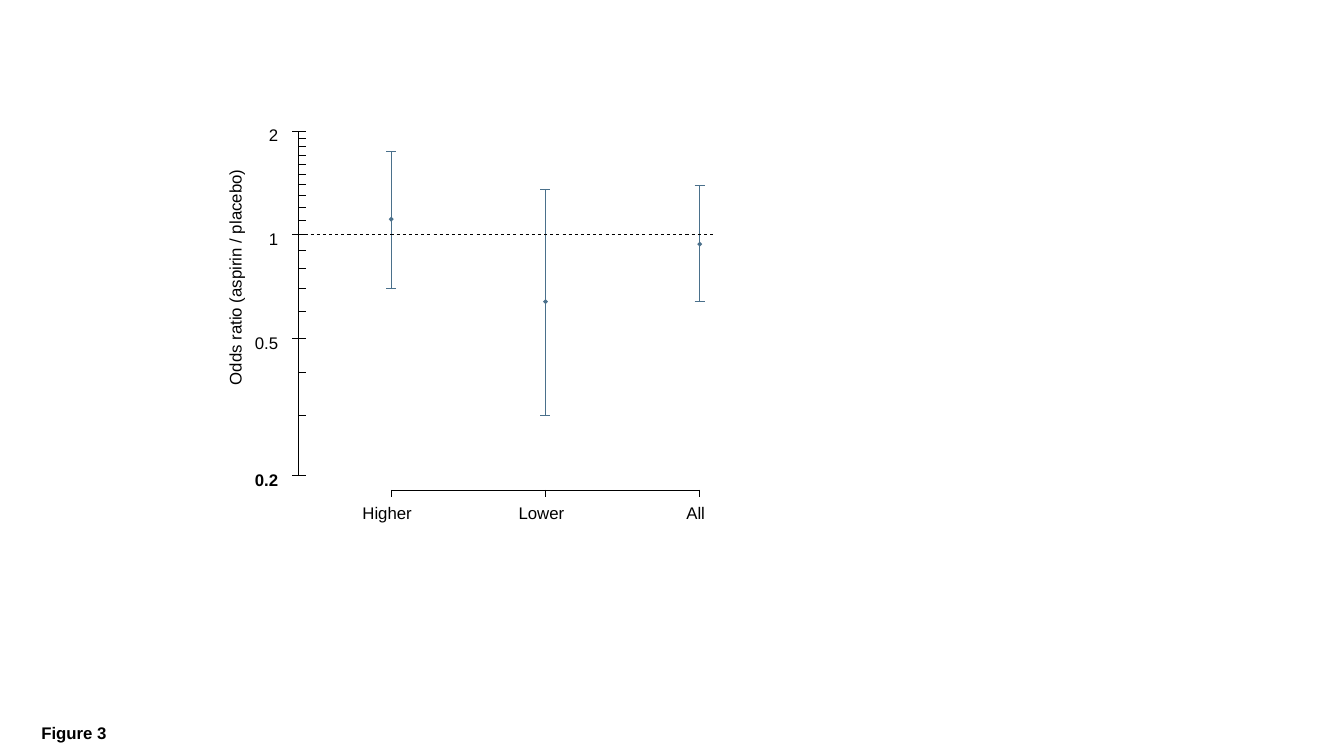
"""Build the odds ratio slide with a logarithmic scale and confidence intervals."""
from collections import namedtuple
from math import log

from lxml.etree import SubElement
from pptx import Presentation
from pptx.dml.color import RGBColor
from pptx.enum.shapes import MSO_CONNECTOR, MSO_SHAPE
from pptx.enum.text import MSO_ANCHOR, MSO_AUTO_SIZE, PP_ALIGN
from pptx.oxml.ns import qn
from pptx.util import Inches, Pt

BLACK = RGBColor(0x00, 0x00, 0x00)
STEEL = RGBColor(0x4A, 0x70, 0x8B)

LABEL_FONT = {"name": "Arial", "size": Pt(12), "bold": False}
LABEL_FRAME = {"margin_left": 0, "margin_right": 0, "margin_top": 0,
               "margin_bottom": 0, "word_wrap": False,
               "auto_size": MSO_AUTO_SIZE.SHAPE_TO_FIT_TEXT}

Box = namedtuple("Box", "left top width height")
Group = namedtuple("Group", "label label_width estimate low high")

LOWEST, HIGHEST = 0.2, 2
MAJOR_RATIOS = (0.2, 0.5, 1, 2)
GROUPS = (
    Group("Higher", 0.52, 1.11, 0.7, 1.75),
    Group("Lower", 0.48, 0.64, 0.3, 1.35),
    Group("All", 0.2, 0.94, 0.64, 1.39),
)


def set_all(target, values):
    """Set every attribute named in values on target."""
    for name, value in values.items():
        setattr(target, name, value)


def ratio_y(plot, ratio):
    """Return the height on the slide of an odds ratio on the log scale."""
    return plot.top + plot.height * log(HIGHEST / ratio) / log(HIGHEST / LOWEST)


def group_x(plot, index):
    """Return the horizontal place of a group; the last is at the right edge."""
    return plot.left + plot.width - 1.53 * (len(GROUPS) - 1 - index)


def add_rule(shapes, x1, y1, x2, y2, color=BLACK):
    """Draw a thin straight line and return it."""
    rule = shapes.add_connector(MSO_CONNECTOR.STRAIGHT, Inches(x1), Inches(y1),
                                Inches(x2), Inches(y2))
    rule.line.width = Pt(0.5)
    rule.line.color.rgb = color
    SubElement(rule._element.spPr, qn("a:effectLst"))
    return rule


def dash_rule(rule):
    """Break a line into even dashes and gaps."""
    pattern = SubElement(rule.line._get_or_add_ln(), qn("a:custDash"))
    SubElement(pattern, qn("a:ds"), d="430000", sp="430000")


def write_text(frame, text, alignment=PP_ALIGN.LEFT, bold=False):
    """Write one formatted line in a text frame."""
    frame.text = text
    line = frame.paragraphs[0]
    line.alignment = alignment
    set_all(line.runs[0].font, {**LABEL_FONT, "bold": bold})
    line.runs[0].font.color.rgb = BLACK


def add_label(shapes, box, text, alignment, bold=False):
    """Add a label without margins."""
    label = shapes.add_textbox(*map(Inches, box))
    set_all(label.text_frame, LABEL_FRAME)
    write_text(label.text_frame, text, alignment, bold)


def add_intervals(shapes, plot):
    """Draw the estimate and confidence interval of each group."""
    marker_size, cap = 0.05, 0.05
    for index, group in enumerate(GROUPS):
        x = group_x(plot, index)
        low, high = ratio_y(plot, group.low), ratio_y(plot, group.high)
        marker = shapes.add_shape(
            MSO_SHAPE.DIAMOND, Inches(x - marker_size / 2),
            Inches(ratio_y(plot, group.estimate) - marker_size / 2),
            Inches(marker_size), Inches(marker_size))
        marker.shadow.inherit = False
        marker.fill.solid()
        marker.fill.fore_color.rgb = STEEL
        marker.line.fill.background()
        add_rule(shapes, x, low, x, high, STEEL)
        for y in (low, high):
            add_rule(shapes, x - cap, y, x + cap, y, STEEL)


def add_group_axis(shapes, plot):
    """Draw the axis with the group names below the plot."""
    y = plot.top + plot.height + 0.14
    add_rule(shapes, group_x(plot, 0), y, plot.left + plot.width, y)
    for index, group in enumerate(GROUPS):
        x = group_x(plot, index)
        add_rule(shapes, x, y, x, y + 0.07)
        label = Box(x - 0.04 - group.label_width / 2, y + 0.13,
                    group.label_width, 0.2)
        add_label(shapes, label, group.label, PP_ALIGN.CENTER)


def add_ratio_axis(shapes, plot):
    """Draw the logarithmic axis, its title and the line of no effect."""
    x = plot.left
    add_rule(shapes, x, plot.top + plot.height, x, plot.top)
    for tenths in range(2, 21):
        y = ratio_y(plot, tenths / 10)
        add_rule(shapes, x, y, x + 0.08, y)
    for ratio in MAJOR_RATIOS:
        y = ratio_y(plot, ratio)
        add_rule(shapes, x, y, x - 0.06, y)
        add_label(shapes, Box(x - 0.46, y - 0.06, 0.26, 0.2), str(ratio),
                  PP_ALIGN.RIGHT, bold=ratio == LOWEST)
    no_effect = ratio_y(plot, 1)
    dash_rule(add_rule(shapes, x + 0.06, no_effect,
                       x + plot.width + 0.13, no_effect))
    axis_title = shapes.add_textbox(Inches(x - 1.94), Inches(plot.top + 1.16),
                                    Inches(2.62), Inches(0.3))
    axis_title.rotation = 270
    axis_title.text_frame.word_wrap = True
    write_text(axis_title.text_frame, "Odds ratio (aspirin / placebo)")


def add_figure_title(slide, box):
    """Place the figure number in the title placeholder."""
    title = slide.shapes.title
    set_all(title, dict(zip(box._fields, map(Inches, box))))
    set_all(title.text_frame, {"word_wrap": True, "auto_size": MSO_AUTO_SIZE.NONE,
                               "vertical_anchor": MSO_ANCHOR.TOP})
    write_text(title.text_frame, "Figure 3", bold=True)


def main():
    """Build and save the slide."""
    deck = Presentation()
    set_all(deck, {"slide_width": Inches(13.33), "slide_height": Inches(7.5)})
    slide = deck.slides.add_slide(deck.slide_layouts[5])
    plot = Box(2.96, 1.3, 3.98, 3.42)
    chart_parts = slide.shapes.add_group_shape().shapes
    for add_part in (add_intervals, add_group_axis, add_ratio_axis):
        add_part(chart_parts, plot)
    add_figure_title(slide, Box(0.31, 7.12, 1.33, 0.3))
    deck.save("out.pptx")


if __name__ == "__main__":
    main()
